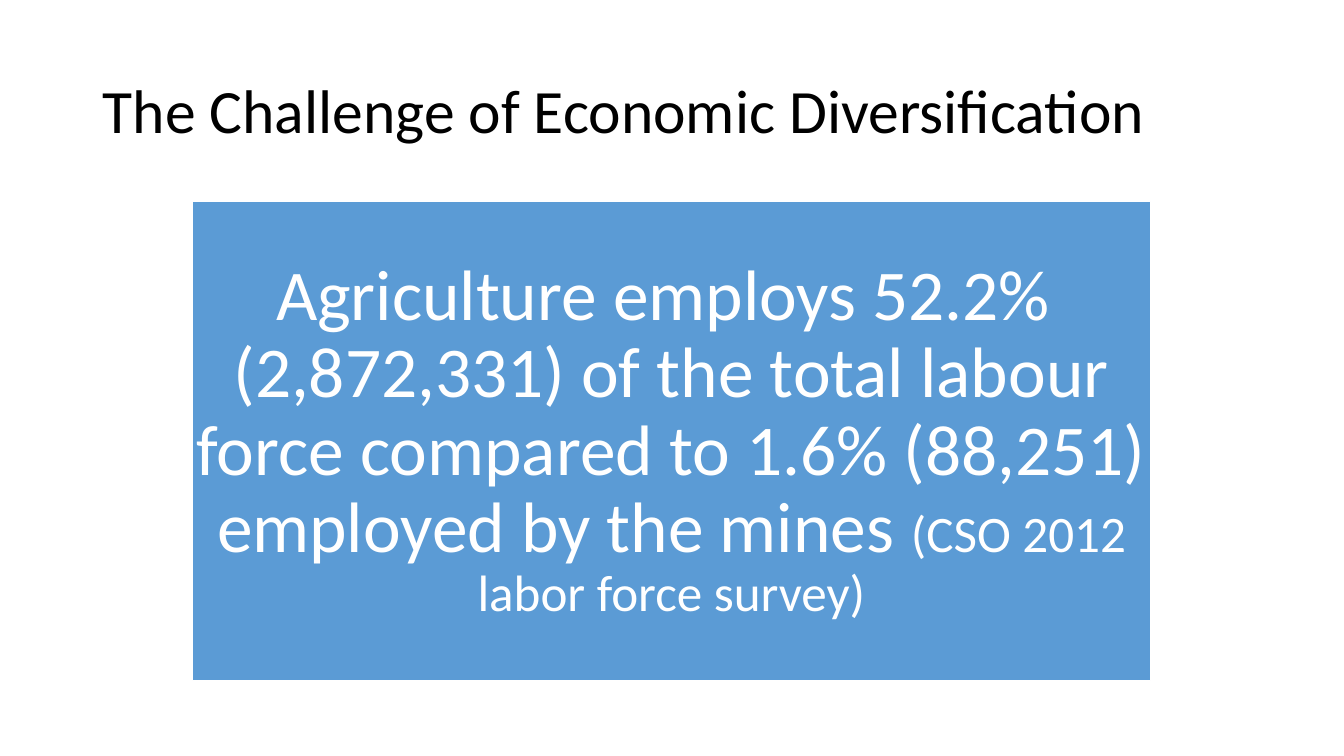
from pptx import Presentation
from pptx.dml.color import RGBColor
from pptx.enum.shapes import MSO_SHAPE
from pptx.enum.text import MSO_ANCHOR, PP_ALIGN
from pptx.util import Inches, Pt

# Content
TITLE = "The Challenge of Economic Diversification"
STATEMENT = [  # text, size in points
    ("Agriculture employs 52.2%  (2,872,331) of the total labour force "
     "compared to 1.6% (88,251) employed by the mines ", 51),
    ("(CSO 2012 labor force survey)", 36.5),
]

FONT = "Calibri"
BLACK = RGBColor(0x00, 0x00, 0x00)
WHITE = RGBColor(0xFF, 0xFF, 0xFF)
BLUE = RGBColor(0x5B, 0x9B, 0xD5)


def add_run(p, text, size, color):
    r = p.add_run()
    r.text = text
    r.font.name = FONT
    r.font.size = Pt(size)
    r.font.color.rgb = color


prs = Presentation()
prs.slide_width, prs.slide_height = Inches(13.33), Inches(7.5)
slide = prs.slides.add_slide(prs.slide_layouts[5])

# Title
title = slide.shapes.title
title.left, title.top = Inches(0.92), Inches(0.4)
title.width, title.height = Inches(11.5), Inches(1.45)
tf = title.text_frame
tf.word_wrap = True
tf.vertical_anchor = MSO_ANCHOR.MIDDLE
p = tf.paragraphs[0]
p.alignment = PP_ALIGN.LEFT
p.line_spacing = 0.9
add_run(p, TITLE, 44, BLACK)

# Statement panel
panel = slide.shapes.add_shape(MSO_SHAPE.RECTANGLE, Inches(1.91), Inches(2),
                               Inches(9.5), Inches(4.75))
panel.shadow.inherit = False
panel.fill.solid()
panel.fill.fore_color.rgb = BLUE
panel.line.color.rgb = WHITE
panel.line.width = Pt(1)
tf = panel.text_frame
tf.word_wrap = True
tf.vertical_anchor = MSO_ANCHOR.MIDDLE
tf.margin_left = tf.margin_right = tf.margin_top = tf.margin_bottom = Inches(0.04)
p = tf.paragraphs[0]
p.alignment = PP_ALIGN.CENTER
p.line_spacing = 0.9
for text, size in STATEMENT:
    add_run(p, text, size, WHITE)

prs.save("out.pptx")
